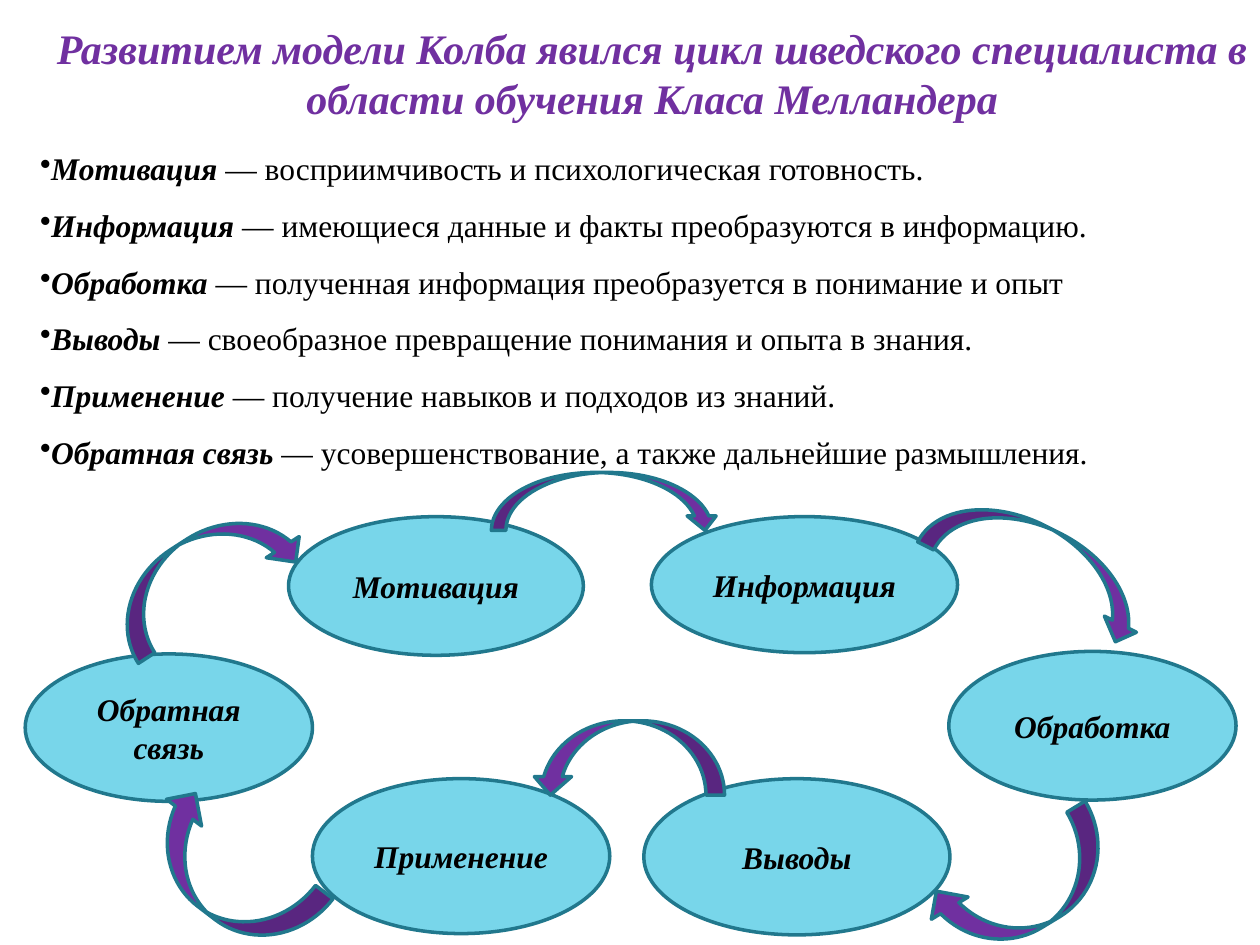
"""Build a slide on Mellander's learning cycle: six definitions above a ring of six stages."""
import pptx
import pptx.dml.color
import pptx.enum.shapes
import pptx.enum.text
import pptx.util
from lxml import etree

PURPLE = pptx.dml.color.RGBColor(0x70, 0x30, 0xA0)
AQUA = pptx.dml.color.RGBColor(0x78, 0xD6, 0xEA)
TEAL = pptx.dml.color.RGBColor(0x21, 0x78, 0x8D)
BLACK = pptx.dml.color.RGBColor(0, 0, 0)

SHAPE = pptx.enum.shapes.MSO_SHAPE
MIDDLE = pptx.enum.text.MSO_ANCHOR.MIDDLE
CENTER = pptx.enum.text.PP_ALIGN.CENTER
GROW = pptx.enum.text.MSO_AUTO_SIZE.SHAPE_TO_FIT_TEXT

TERM = {"name": "Times New Roman", "size": pptx.util.Pt(18), "bold": True, "italic": True}
MEANING = TERM | {"bold": False, "italic": False}
HEADLINE = TERM | {"size": pptx.util.Pt(24)}

deck = pptx.Presentation()
deck.slide_width = pptx.util.Inches(10)
deck.slide_height = pptx.util.Inches(7.5)
slide = deck.slides.add_slide(deck.slide_layouts[6])


def area(left, top, width, height):
    column, row = deck.slide_width / 100, deck.slide_height / 100
    return [round(left * column), round(top * row), round(width * column), round(height * row)]


def write(paragraph, wording, formats, color):
    run = paragraph.add_run()
    run.text = wording
    for attribute, value in formats.items():
        setattr(run.font, attribute, value)
    run.font.color.rgb = color


definitions = [
    ("Мотивация", " — восприимчивость и психологическая готовность."),
    ("Информация", " — имеющиеся данные и факты преобразуются в информацию."),
    ("Обработка", " — полученная информация преобразуется в понимание и опыт"),
    ("Выводы", " — своеобразное превращение понимания и опыта в знания."),
    ("Применение", " — получение навыков и подходов из знаний."),
    ("Обратная связь", " — усовершенствование, а также дальнейшие размышления."),
]
glossary = slide.shapes.add_textbox(*area(2.2, 13.33, 100, 36.93)).text_frame
for attribute, value in {"word_wrap": True, "vertical_anchor": MIDDLE, "auto_size": GROW}.items():
    setattr(glossary, attribute, value)
for number, (term, meaning) in enumerate(definitions):
    entry = glossary.add_paragraph() if number else glossary.paragraphs[0]
    entry.line_spacing = 1.5
    bullet = etree.SubElement(entry._p.get_or_add_pPr(), pptx.oxml.ns.qn("a:buChar"))
    bullet.set("char", "•")
    write(entry, term, TERM, BLACK)
    write(entry, meaning, MEANING, BLACK)

stages = [
    ("Обратная связь", 2, 69.2, 22.8, 15.6),
    ("Мотивация", 22.9, 54.67, 23.4, 14.67),
    ("Информация", 51.7, 54.67, 24.3, 14.4),
    ("Обработка", 75.3, 68.93, 22.8, 15.73),
    ("Выводы", 51.1, 82.4, 24.3, 16.53),
    ("Применение", 24.8, 82.4, 23.6, 16.4),
]
transitions = [
    (SHAPE.CURVED_DOWN_ARROW, 0, 39, 50, 18.1, 6.13),
    (SHAPE.CURVED_DOWN_ARROW, 26.8, 73.1, 55.87, 19, 7.6),
    (SHAPE.CURVED_DOWN_ARROW, 148.8, 73.5, 89.47, 15.5, 9.07),
    (SHAPE.CURVED_UP_ARROW, 180, 42.2, 76.27, 15.3, 7.87),
    (SHAPE.CURVED_DOWN_ARROW, 217.4, 10.4, 87.87, 15.5, 9.33),
    (SHAPE.CURVED_DOWN_ARROW, 327.2, 8, 56.67, 16.4, 8.27),
]
cycle = [(SHAPE.OVAL, 0, AQUA, label, place) for label, *place in stages]
cycle += [(preset, turn, PURPLE, "", place) for preset, turn, *place in transitions]
for preset, turn, color, label, place in cycle:
    part = slide.shapes.add_shape(preset, *area(*place))
    part.rotation = turn
    part.shadow.inherit = False
    part.fill.solid()
    part.fill.fore_color.rgb = color
    part.line.color.rgb = TEAL
    part.line.width = pptx.util.Pt(2)
    if label:
        part.text_frame.vertical_anchor = MIDDLE
        part.text_frame.paragraphs[0].alignment = CENTER
        write(part.text_frame.paragraphs[0], label, TERM, BLACK)

title = slide.shapes.add_textbox(*area(3.5, 1.73, 96.5, 12.13)).text_frame
for attribute, value in {"word_wrap": True, "auto_size": GROW}.items():
    setattr(title, attribute, value)
title.paragraphs[0].alignment = CENTER
write(
    title.paragraphs[0],
    "Развитием модели Колба явился цикл шведского специалиста в области обучения Класа Мелландера",
    HEADLINE,
    PURPLE,
)

deck.save("out.pptx")
